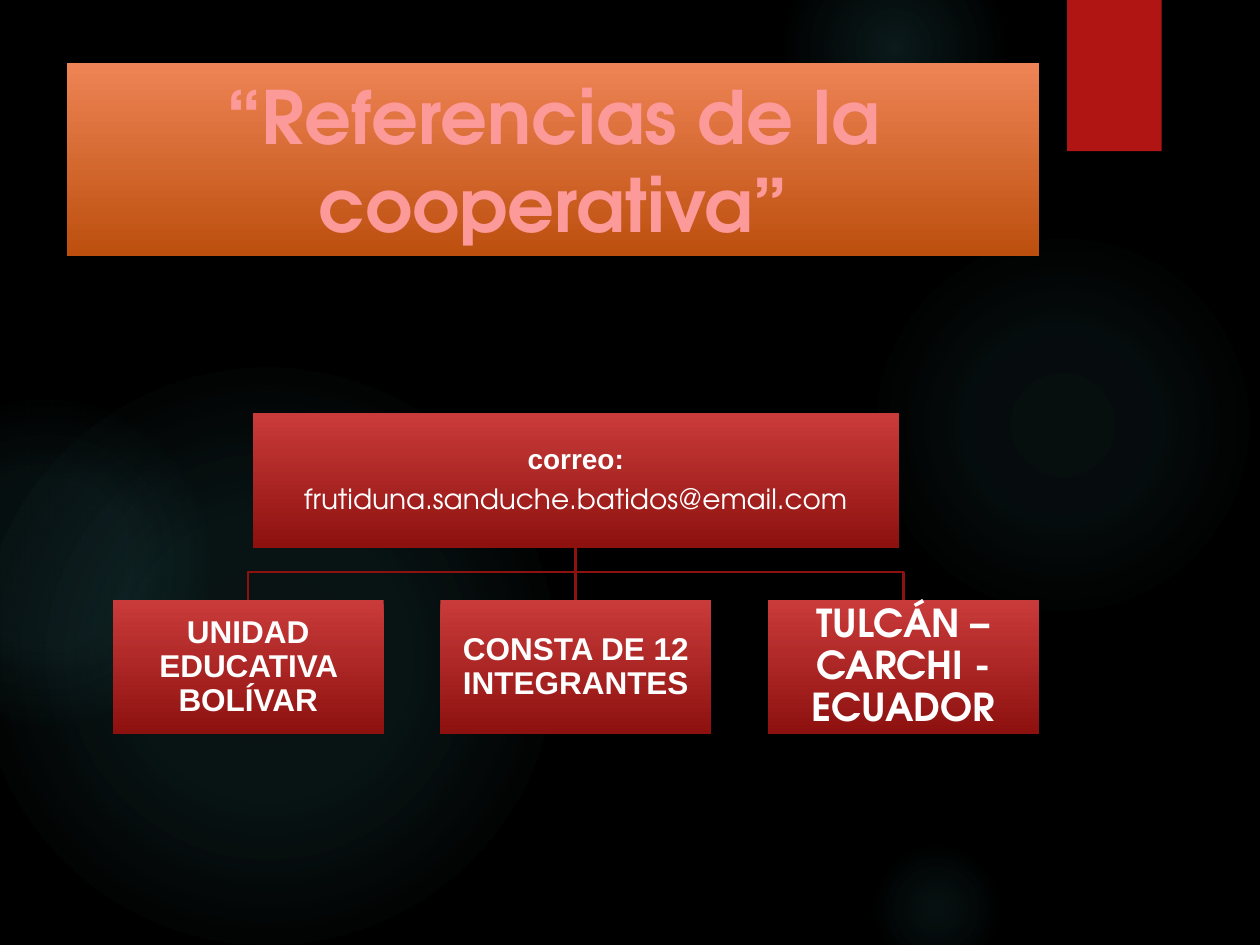
from dataclasses import dataclass

from lxml import etree
from pptx import Presentation
from pptx.dml.color import RGBColor
from pptx.enum.shapes import MSO_CONNECTOR, MSO_SHAPE
from pptx.enum.text import MSO_ANCHOR, PP_ALIGN
from pptx.oxml import parse_xml
from pptx.oxml.ns import nsdecls, qn
from pptx.util import Inches, Pt

RECTANGLE, ELLIPSE = MSO_SHAPE.RECTANGLE, MSO_SHAPE.OVAL
STRAIGHT = MSO_CONNECTOR.STRAIGHT
CENTER, MIDDLE = PP_ALIGN.CENTER, MSO_ANCHOR.MIDDLE


@dataclass(frozen=True)
class Theme:
    background: str = "000000"
    glow: str = "50B9C1"
    ribbon: str = "B01513"
    banner: tuple = ("EE8455", "BC4F0E")
    box: tuple = ("C93B3A", "8D110F")
    line: str = "8D110F"
    title: str = "FC9999"
    text: str = "FFFFFF"
    display_font: str = "TeX Gyre Adventor"
    body_font: str = "Arial"
    title_size: int = 42
    large_size: int = 22
    label_size: int = 18
    contact_size: int = 16


def write(paragraph, text, *, font, size, color, bold=True, spacing=None, after=0):
    """Add one formatted, centred run to a paragraph."""
    paragraph.alignment = CENTER
    paragraph.space_before = Pt(0)
    paragraph.space_after = Pt(after)
    if spacing:
        paragraph.line_spacing = spacing
    run = paragraph.add_run()
    run.text = text
    run.font.name, run.font.size, run.font.bold = font, Pt(size), bold
    run.font.color.rgb = RGBColor.from_string(color)


def shade(shape, colors):
    """Fill a shape with a gradient from top to bottom."""
    shape.fill.gradient()
    shape.fill.gradient_angle = 270
    for stop, color in zip(shape.fill.gradient_stops, colors):
        stop.color.rgb = RGBColor.from_string(color)


class SlideBuilder:
    def __init__(self, slide, theme):
        self.slide, self.theme = slide, theme
        background = slide.background.fill
        background.solid()
        background.fore_color.rgb = RGBColor.from_string(theme.background)

    def shape(self, kind, left, top, width, height):
        shape = self.slide.shapes.add_shape(
            kind, Inches(left), Inches(top), Inches(width), Inches(height))
        shape.shadow.inherit = False
        shape.line.fill.background()
        return shape

    def glow(self, left, top, diameter, stops):
        """Soft disc; stops are (position, opacity) in percent."""
        disc = self.shape(ELLIPSE, left, top, diameter, diameter)
        stop_xml = "".join(
            f'<a:gs pos="{position * 1000}"><a:srgbClr val="{self.theme.glow}">'
            f'<a:alpha val="{opacity * 1000}"/></a:srgbClr></a:gs>'
            for position, opacity in stops)
        gradient = parse_xml(
            f'<a:gradFill {nsdecls("a")} rotWithShape="1"><a:gsLst>{stop_xml}</a:gsLst>'
            '<a:path path="circle"><a:fillToRect l="50000" t="50000" r="50000" b="50000"/>'
            '</a:path></a:gradFill>')
        disc._element.spPr.find(qn("a:prstGeom")).addnext(gradient)

    def ribbon(self, left, top, width, height):
        ribbon = self.shape(RECTANGLE, left, top, width, height)
        ribbon.fill.solid()
        ribbon.fill.fore_color.rgb = RGBColor.from_string(self.theme.ribbon)

    def title(self, text, left, top, width, height):
        title = self.slide.shapes.title
        title.left, title.top = Inches(left), Inches(top)
        title.width, title.height = Inches(width), Inches(height)
        shade(title, self.theme.banner)
        frame = title.text_frame
        frame.word_wrap, frame.vertical_anchor = True, MIDDLE
        write(frame.paragraphs[0], text, font=self.theme.display_font,
              size=self.theme.title_size, color=self.theme.title)
        # Bring the title in front of the background discs
        self.slide.shapes._spTree.append(title._element)

    def line(self, x1, y1, x2, y2):
        line = self.slide.shapes.add_connector(
            STRAIGHT, Inches(x1), Inches(y1), Inches(x2), Inches(y2))
        self.stroke(line)
        etree.SubElement(line._element.spPr, qn("a:effectLst"))

    def branch(self, points):
        (x, y), *rest = [(Inches(px), Inches(py)) for px, py in points]
        builder = self.slide.shapes.build_freeform(x, y)
        builder.add_line_segments(rest, close=False)
        branch = builder.convert_to_shape()
        branch.shadow.inherit = False
        branch.fill.background()
        self.stroke(branch)

    def stroke(self, shape):
        shape.line.color.rgb = RGBColor.from_string(self.theme.line)
        shape.line.width = Pt(1.5)

    def box(self, left, top, width, height, lines):
        """Chart box; lines are (text, format) pairs."""
        box = self.shape(RECTANGLE, left, top, width, height)
        shade(box, self.theme.box)
        frame = box.text_frame
        frame.word_wrap, frame.vertical_anchor = True, MIDDLE
        frame.margin_left = frame.margin_right = Inches(0.01)
        frame.margin_top = frame.margin_bottom = Inches(0.01)
        for index, (text, style) in enumerate(lines):
            paragraph = frame.add_paragraph() if index else frame.paragraphs[0]
            write(paragraph, text, color=self.theme.text, spacing=0.9, **style)


def main():
    theme = Theme()
    deck = Presentation()
    deck.slide_width, deck.slide_height = Inches(10), Inches(7.5)
    page = SlideBuilder(deck.slides.add_slide(deck.slide_layouts[5]), theme)

    # Background
    for left, top, diameter, stops in (
            (6.89, 1.83, 3.08, ((0, 7), (36, 6), (69, 0), (100, 0))),
            (6.22, -0.5, 1.75, ((0, 14), (36, 7), (73, 0), (100, 0))),
            (6.89, 6.67, 1.08, ((0, 9), (36, 5), (66, 0), (100, 0))),
            (-0.17, 2.92, 4.58, ((0, 11), (36, 10), (75, 0), (100, 0))),
            (-0.92, 3.17, 2.58, ((0, 8), (36, 8), (72, 0), (100, 0)))):
        page.glow(left, top, diameter, stops)
    page.ribbon(8.47, 0, 0.75, 1.2)
    page.title("“Referencias de la cooperativa”", 0.53, 0.5, 7.72, 1.53)

    # Chart geometry: three equal columns under one contact box
    center, contact_width, box_width, box_height = 4.57, 5.13, 2.15, 1.07
    contact_top, detail_top, column_step = 3.28, 4.76, 2.6
    contact_bottom, bend = contact_top + box_height, 4.54
    columns = [center + step * column_step for step in (-1, 0, 1)]

    # Connecting lines
    for x in (columns[0], columns[2]):
        page.branch([(center, contact_bottom), (center, bend), (x, bend), (x, detail_top)])
    page.line(center, contact_bottom, center, detail_top)

    # Contact box
    contact = dict(size=theme.contact_size)
    page.box(center - contact_width / 2, contact_top, contact_width, box_height, [
        ("correo:", dict(contact, font=theme.body_font, after=5.6)),
        ("frutiduna.sanduche.batidos@email.com",
         dict(contact, font=theme.display_font, bold=False))])

    # Detail boxes
    label = dict(font=theme.body_font, size=theme.label_size)
    place = dict(font=theme.display_font, size=theme.large_size)
    details = (("UNIDAD EDUCATIVA BOLÍVAR", label),
               ("CONSTA DE 12 INTEGRANTES", label),
               ("TULCÁN –CARCHI - ECUADOR", place))
    for x, detail in zip(columns, details):
        page.box(x - box_width / 2, detail_top, box_width, box_height, [detail])

    deck.save("out.pptx")


if __name__ == "__main__":
    main()
